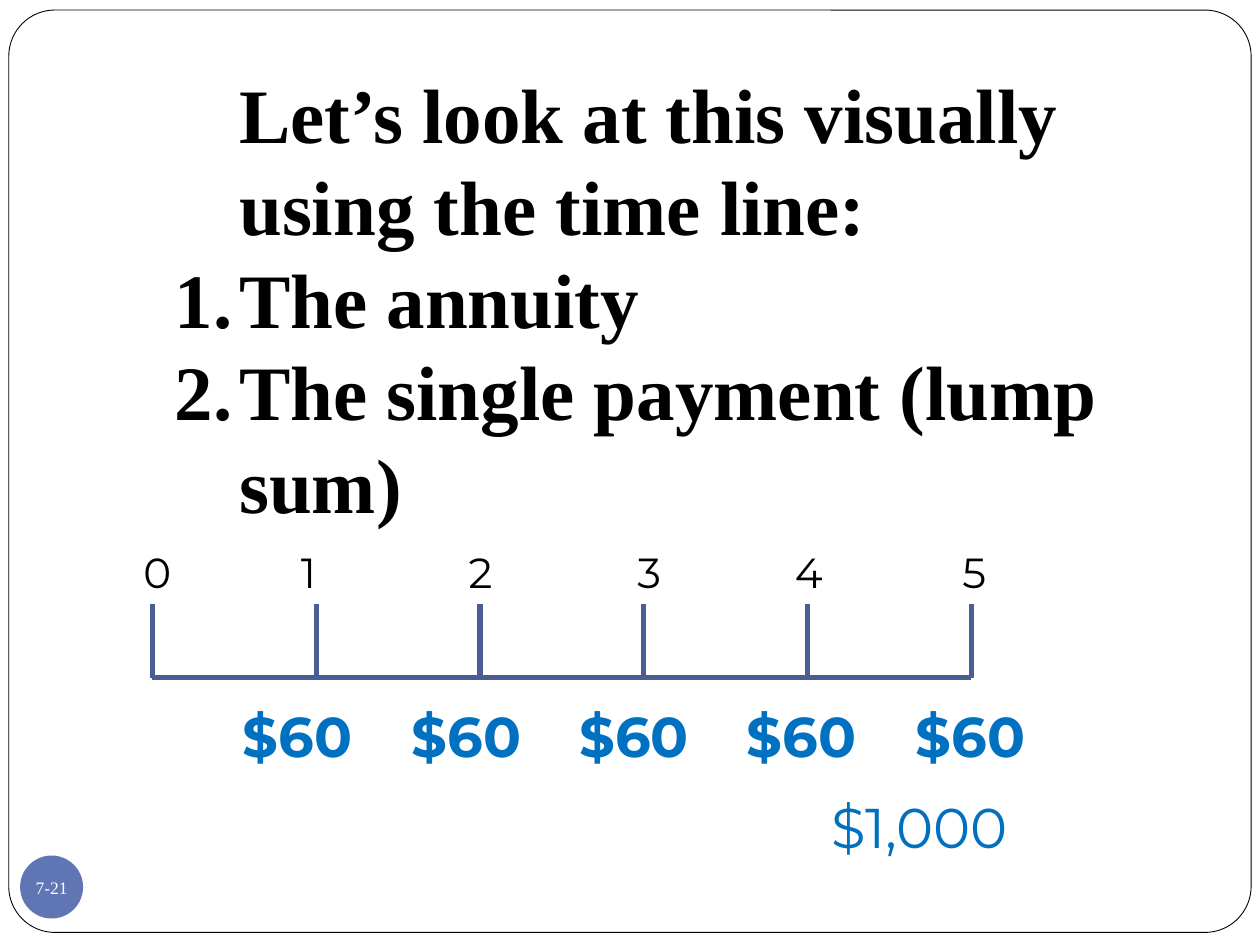
"""Build the time line slide: an annuity of five payments and a lump sum."""
from dataclasses import dataclass

import pptx
import pptx.dml.color
import pptx.enum.shapes
import pptx.enum.text
import pptx.oxml.ns
import pptx.util
from lxml import etree

EMU_PER_PX = 9144
SHAPE = pptx.enum.shapes.MSO_SHAPE
ALIGN = pptx.enum.text.PP_ALIGN
ANCHOR = pptx.enum.text.MSO_ANCHOR
AUTO_SIZE = pptx.enum.text.MSO_AUTO_SIZE


@dataclass(frozen=True)
class Theme:
    black: str = "000000"
    white: str = "FFFFFF"
    badge: str = "6076B4"
    axis: str = "4A5D94"
    money: str = "0070C0"
    serif: str = "Times New Roman"
    sans: str = "Montserrat"
    heading_size: int = 44
    money_size: int = 32
    period_size: int = 24
    badge_size: int = 10
    axis_width: int = 3
    frame_width: float = 0.5


@dataclass(frozen=True)
class TextStyle:
    font: str
    size: int
    color: str
    bold: bool = False


@dataclass(frozen=True)
class Label:
    text: str
    left: int
    top: int
    width: int
    height: int


THEME = Theme()
HEADING = TextStyle(THEME.serif, THEME.heading_size, THEME.black, True)
BADGE = TextStyle(THEME.serif, THEME.badge_size, THEME.white)
PAYMENT = TextStyle(THEME.sans, THEME.money_size, THEME.money, True)
LUMP_SUM = TextStyle(THEME.sans, THEME.money_size, THEME.money)
PERIOD = TextStyle(THEME.sans, THEME.period_size, THEME.black)

HEADING_LINES = (
    ("Let’s look at this visually using the time line:", False),
    ("The annuity", True),
    ("The single payment (lump sum)", True),
)
HANGING = 51
AXIS_LEFT, AXIS_STEP, AXIS_TOP, AXIS_BOTTOM = 121, 130, 479, 538
PERIOD_LEFTS = (104, 229, 362, 496, 621, 754)
PERIOD_WIDTHS = (42, 26, 31, 31, 36, 42)
PAYMENT_LEFTS = (183, 317, 450, 583, 717)


def px(length: int) -> pptx.util.Emu:
    """Turn px into EMU."""
    return pptx.util.Emu(length * EMU_PER_PX)


def rgb(color: str) -> pptx.dml.color.RGBColor:
    """Turn a hex string into a colour."""
    return pptx.dml.color.RGBColor.from_string(color)


def set_all(target, values: dict) -> None:
    """Set every named attribute on the target."""
    for name, value in values.items():
        setattr(target, name, value)


def write(para, text: str, style: TextStyle) -> None:
    """Add one styled span to a paragraph."""
    span = para.add_run()
    span.text = text
    set_all(span.font, {"name": style.font, "size": pptx.util.Pt(style.size), "bold": style.bold})
    span.font.color.rgb = rgb(style.color)


def add_box(shapes, label: Label):
    """Add an empty wrapping text box where the label stands."""
    box = shapes.add_textbox(px(label.left), px(label.top), px(label.width), px(label.height))
    set_all(box.text_frame, {"word_wrap": True, "auto_size": AUTO_SIZE.SHAPE_TO_FIT_TEXT})
    return box


def add_label(shapes, label: Label, style: TextStyle) -> None:
    """Add a one-line text box."""
    write(add_box(shapes, label).text_frame.paragraphs[0], label.text, style)


def add_heading(shapes) -> None:
    """Add the introduction and its numbered list."""
    frame = add_box(shapes, Label("", 129, 48, 758, 376)).text_frame
    for index, (text, numbered) in enumerate(HEADING_LINES):
        para = frame.add_paragraph() if index else frame.paragraphs[0]
        write(para, text, HEADING)
        properties = para._p.get_or_add_pPr()
        properties.set("marL", str(px(HANGING)))
        properties.set("indent", str(px(-HANGING if numbered else 0)))
        if numbered:
            number = etree.SubElement(properties, pptx.oxml.ns.qn("a:buAutoNum"))
            number.set("type", "arabicPeriod")


def add_preset(shapes, kind, label: Label, fill: str):
    """Add a filled preset shape without outline or shadow."""
    shape = shapes.add_shape(kind, px(label.left), px(label.top), px(label.width), px(label.height))
    shape.shadow.inherit = False
    shape.fill.solid()
    shape.fill.fore_color.rgb = rgb(fill)
    shape.line.fill.background()
    return shape


def add_frame(shapes) -> None:
    """Add the rounded border of the page."""
    frame = add_preset(shapes, SHAPE.ROUNDED_RECTANGLE, Label("", 7, 8, 986, 732), THEME.white)
    frame.adjustments[0] = 0.05
    frame.line.color.rgb = rgb(THEME.black)
    frame.line.width = pptx.util.Pt(THEME.frame_width)


def add_badge(shapes) -> None:
    """Add the round page number."""
    label = Label("7-21", 16, 679, 50, 50)
    frame = add_preset(shapes, SHAPE.OVAL, label, THEME.badge).text_frame
    sides = ("left", "top", "right", "bottom")
    set_all(frame, {f"margin_{side}": 0 for side in sides})
    set_all(frame, {"word_wrap": False, "vertical_anchor": ANCHOR.MIDDLE})
    frame.paragraphs[0].alignment = ALIGN.CENTER
    write(frame.paragraphs[0], label.text, BADGE)


def add_line(shapes, left: int, top: int, right: int, bottom: int) -> None:
    """Add one straight stroke of the time line."""
    line = shapes.add_connector(
        pptx.enum.shapes.MSO_CONNECTOR.STRAIGHT, px(left), px(top), px(right), px(bottom)
    )
    line.line.color.rgb = rgb(THEME.axis)
    line.line.width = pptx.util.Pt(THEME.axis_width)
    etree.SubElement(line._element.spPr, pptx.oxml.ns.qn("a:effectLst"))


def add_time_line(shapes) -> None:
    """Add the axis, its ticks and the period numbers."""
    ticks = [AXIS_LEFT + AXIS_STEP * period for period in range(len(PERIOD_LEFTS))]
    add_line(shapes, ticks[0], AXIS_BOTTOM, ticks[-1], AXIS_BOTTOM)
    for tick in ticks:
        add_line(shapes, tick, AXIS_TOP, tick, AXIS_BOTTOM)
    for period, (left, width) in enumerate(zip(PERIOD_LEFTS, PERIOD_WIDTHS)):
        add_label(shapes, Label(str(period), left, 429, width, 50), PERIOD)


def main() -> None:
    """Build and save the deck."""
    deck = pptx.Presentation()
    set_all(deck, {"slide_width": px(1000), "slide_height": px(750)})
    page = deck.slides.add_slide(deck.slide_layouts.get_by_name("Blank"))
    add_frame(page.shapes)
    add_badge(page.shapes)
    add_heading(page.shapes)
    payments = page.shapes.add_group_shape().shapes
    for left in PAYMENT_LEFTS:
        add_label(payments, Label("$60", left, 552, 117, 64), PAYMENT)
    add_label(page.shapes, Label("$1,000", 650, 624, 225, 64), LUMP_SUM)
    add_time_line(page.shapes.add_group_shape().shapes)
    deck.save("out.pptx")


if __name__ == "__main__":
    main()
